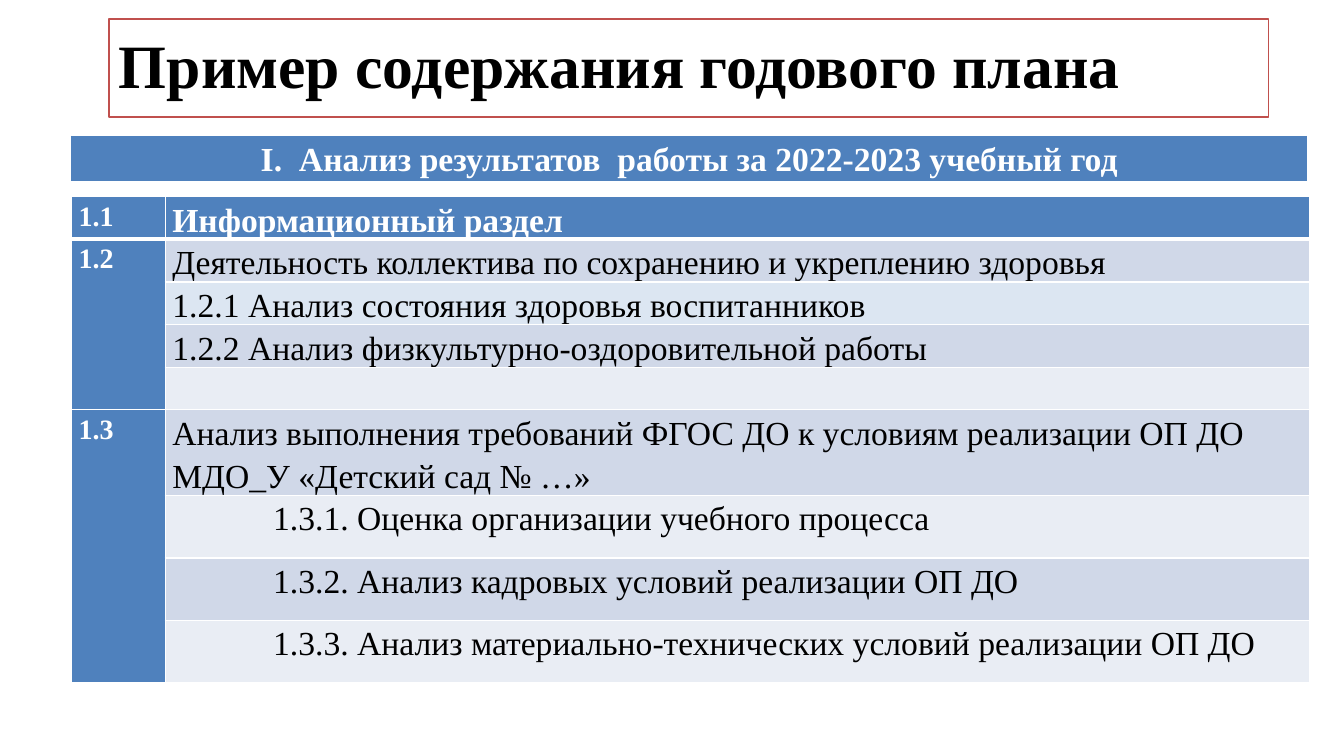
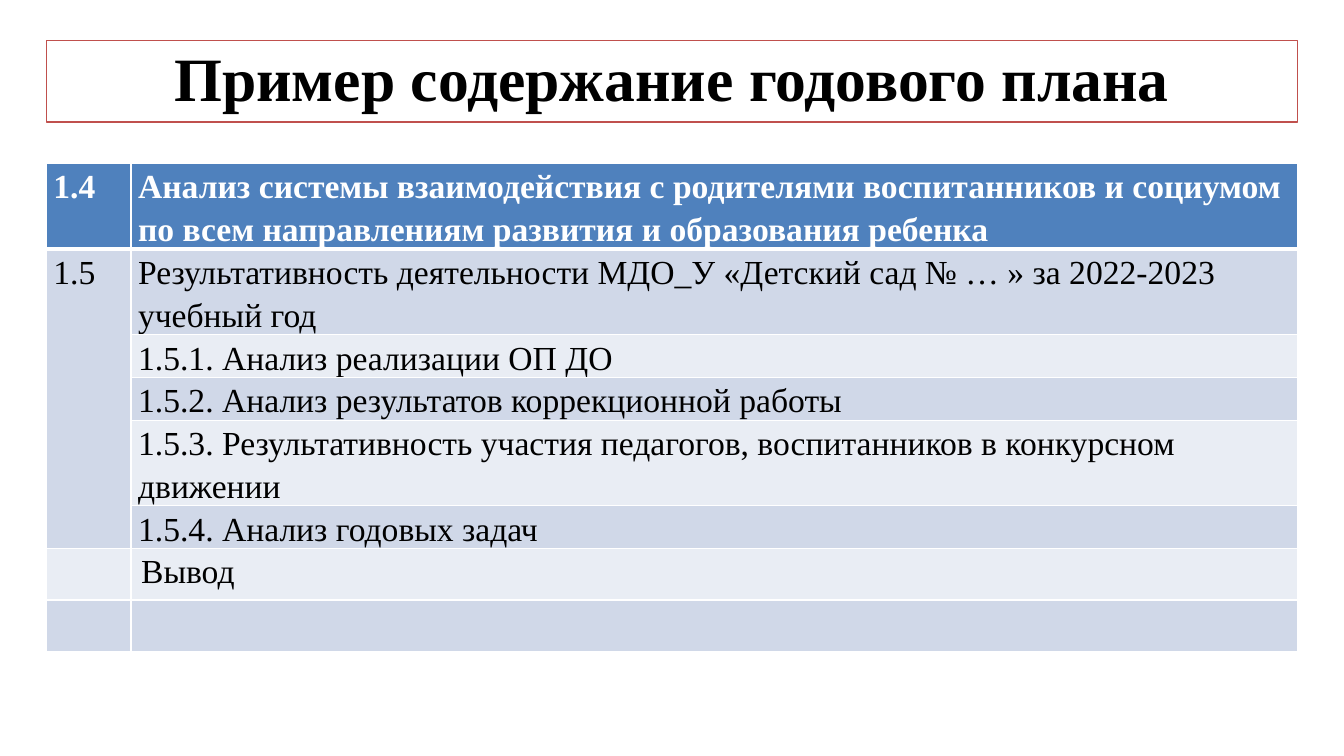
from dataclasses import dataclass

from lxml import etree
from pptx import Presentation
from pptx.dml.color import RGBColor
from pptx.enum.text import MSO_ANCHOR, MSO_AUTO_SIZE, PP_ALIGN
from pptx.oxml.ns import qn
from pptx.util import Inches, Pt


@dataclass(frozen=True)
class Theme:
    font: str = "Times New Roman"
    white: str = "FFFFFF"
    black: str = "000000"
    blue: str = "4F81BD"
    frame: str = "C0504D"
    dark_band: str = "D0D8E8"
    light_band: str = "E9EDF4"
    pale_blue: str = "DCE6F2"
    title_size: int = 44
    text_size: int = 24
    number_size: int = 20


@dataclass(frozen=True)
class Row:
    """One plan row; number None continues the number cell above."""
    text: str
    height: float
    number: str | None = None
    fill: str | None = None
    indent: float = 0
    plain: bool = False


THEME = Theme()


def write_text(frame, text, size=THEME.text_size, color=THEME.black, bold=False,
               align=PP_ALIGN.LEFT, spacing=1.15, indent=0, hanging=0, numbering=None):
    para = frame.paragraphs[0]
    properties = para._p.get_or_add_pPr()
    properties.set("marL", str(Inches(indent)))
    properties.set("indent", str(-Inches(hanging)))
    if numbering:
        etree.SubElement(properties, qn("a:buFont"), typeface="+mj-lt")
        etree.SubElement(properties, qn("a:buAutoNum"), type=numbering)
    para.alignment = align
    para.line_spacing = spacing
    # The paragraph font also sizes empty cells
    fonts = [para.font]
    if text:
        span = para.add_run()
        span.text = text
        fonts.append(span.font)
    for font in fonts:
        font.name, font.size, font.bold = THEME.font, Pt(size), bold
        font.color.rgb = RGBColor.from_string(color)


def style_cell(cell, fill, color=THEME.white, top=1, bottom=1, plain=False):
    """Set the fill, margins and borders of a cell; border widths are points."""
    cell.fill.solid()
    cell.fill.fore_color.rgb = RGBColor.from_string(fill)
    cell.margin_left = cell.margin_right = Inches(0.1 if plain else 0.07)
    cell.margin_top = cell.margin_bottom = Inches(0.05 if plain else 0)
    properties = cell._tc.get_or_add_tcPr()
    widths = {"a:lnL": 1, "a:lnR": 1, "a:lnT": top, "a:lnB": bottom}
    for position, (side, width) in enumerate(widths.items()):
        line = etree.Element(qn(side), w=str(Pt(width)))
        solid = etree.SubElement(line, qn("a:solidFill"))
        etree.SubElement(solid, qn("a:srgbClr"), val=color)
        properties.insert(position, line)


LINE, TWO_LINES, TALL = 0.42, 0.85, 0.62

PAGES = [
    dict(
        title="Пример содержания годового плана",
        title_box=(1.08, 0.19, 11.5, 0.97),
        title_align=PP_ALIGN.LEFT,
        banner="Анализ результатов  работы за 2022-2023 учебный год",
        banner_box=(0.71, 1.35, 12.25, 0.44),
        origin=(0.71, 1.95),
        columns=(0.93, 11.35),
        number_size=THEME.number_size,
        blue_numbers=True,
        rows=[
            Row("Информационный раздел", LINE, "1.1"),
            Row("Деятельность коллектива по сохранению и укреплению здоровья", LINE, "1.2"),
            Row("1.2.1 Анализ состояния здоровья воспитанников", LINE, fill=THEME.pale_blue),
            Row("1.2.2 Анализ физкультурно-оздоровительной работы", LINE),
            Row("", LINE),
            Row("Анализ выполнения требований ФГОС ДО к условиям реализации ОП ДО "
                "МДО_У «Детский сад № …»", TWO_LINES, "1.3"),
            Row("1.3.1. Оценка организации учебного процесса", TALL, indent=1),
            Row("1.3.2. Анализ кадровых условий реализации ОП ДО", TALL, indent=1),
            Row("1.3.3. Анализ материально-технических условий реализации ОП ДО", TALL, indent=1),
        ],
    ),
    dict(
        title="Пример содержание годового плана",
        title_box=(0.46, 0.4, 12.41, 0.81),
        title_align=PP_ALIGN.CENTER,
        banner=None,
        origin=(0.46, 1.62),
        columns=(0.84, 11.57),
        number_size=THEME.text_size,
        blue_numbers=False,
        rows=[
            Row("Анализ системы взаимодействия с родителями воспитанников и социумом "
                "по всем направлениям развития и образования ребенка", TWO_LINES, "1.4"),
            Row("Результативность деятельности МДО_У «Детский сад № … » за 2022-2023 "
                "учебный год", TWO_LINES, "1.5"),
            Row("1.5.1. Анализ реализации ОП ДО", LINE),
            Row("1.5.2. Анализ результатов коррекционной работы", LINE),
            Row("1.5.3. Результативность участия педагогов, воспитанников в конкурсном "
                "движении", TWO_LINES),
            Row("1.5.4. Анализ годовых задач", LINE),
            Row("Вывод", 0.51, "", plain=True),
            Row("", 0.51, "", plain=True),
        ],
    ),
]

deck = Presentation()
deck.slide_width, deck.slide_height = Inches(13.33), Inches(7.5)
title_only = deck.slide_layouts[5]

for content in PAGES:
    page = deck.slides.add_slide(title_only)

    title = page.shapes.title
    title.left, title.top, title.width, title.height = map(Inches, content["title_box"])
    title.fill.solid()
    title.fill.fore_color.rgb = RGBColor.from_string(THEME.white)
    title.line.color.rgb = RGBColor.from_string(THEME.frame)
    title.line.width = Pt(1)
    title.text_frame.auto_size = MSO_AUTO_SIZE.NONE
    title.text_frame.vertical_anchor = MSO_ANCHOR.MIDDLE
    write_text(title.text_frame, content["title"], size=THEME.title_size, bold=True,
               align=content["title_align"], spacing=0.9)

    rows, columns = content["rows"], content["columns"]
    left, top = content["origin"]
    height = sum(row.height for row in rows)
    plan = page.shapes.add_table(len(rows), len(columns), Inches(left), Inches(top),
                                 Inches(sum(columns)), Inches(height)).table
    for column, width in zip(plan.columns, columns):
        column.width = Inches(width)

    number_start = 0
    for index, row in enumerate(rows):
        plan.rows[index].height = Inches(row.height)
        header = index == 0
        band = THEME.dark_band if index % 2 else THEME.light_band
        text_fill = THEME.blue if header else row.fill or band
        blue_number = header or (content["blue_numbers"] and row.number != "")
        if row.number is not None:
            number_start = index
            number_fill = THEME.blue if blue_number else band
        edges = dict(top=3 if index == 1 else 1, bottom=3 if header else 1, plain=row.plain)
        number_cell, text_cell = plan.cell(index, 0), plan.cell(index, 1)
        style_cell(number_cell, number_fill, **edges)
        style_cell(text_cell, text_fill, **edges)
        write_text(number_cell.text_frame, row.number, size=content["number_size"],
                   color=THEME.white if blue_number else THEME.black, bold=blue_number,
                   spacing=1 if row.plain else 1.15)
        write_text(text_cell.text_frame, row.text, bold=header,
                   color=THEME.white if header else THEME.black,
                   spacing=1 if row.plain else 1.15, indent=row.indent)
        last_of_group = index + 1 == len(rows) or rows[index + 1].number is not None
        if last_of_group and index > number_start:
            plan.cell(number_start, 0).merge(number_cell)

    if content["banner"]:
        banner = page.shapes.add_table(1, 1, *map(Inches, content["banner_box"])).table
        cell = banner.cell(0, 0)
        style_cell(cell, THEME.blue, color=THEME.blue, top=0.5, bottom=0.5)
        write_text(cell.text_frame, content["banner"], color=THEME.white, bold=True,
                   align=PP_ALIGN.CENTER, indent=0.38, hanging=0.38,
                   numbering="romanUcPeriod")

deck.save("out.pptx")
